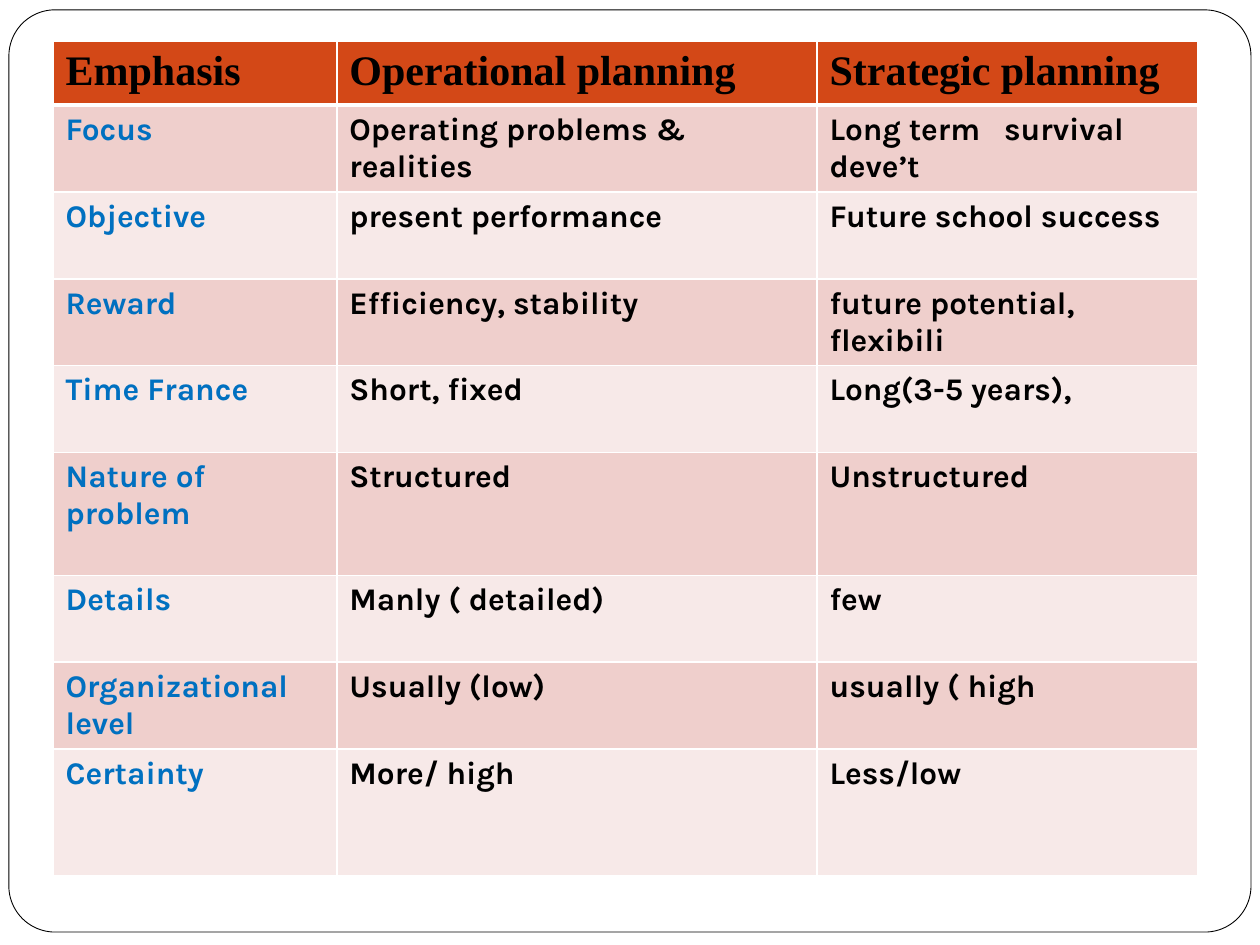
from dataclasses import dataclass

from lxml.etree import SubElement
from pptx import Presentation
from pptx.dml.color import RGBColor
from pptx.enum.shapes import MSO_SHAPE
from pptx.oxml.ns import qn
from pptx.util import Cm, Pt


@dataclass(frozen=True)
class Theme:
    white: str = "FFFFFF"
    ink: str = "000000"
    label: str = "0070C0"
    header: str = "D34817"
    bands: tuple = ("EFCFCC", "F7E9E8")
    head_font: str = "Times New Roman"
    body_font: str = "Karla"
    head_size: int = 24
    body_size: int = 18
    rule: int = 1
    head_rule: int = 3


@dataclass(frozen=True)
class Row:
    emphasis: str
    operational: str
    strategic: str
    height: float = 1.75

    @property
    def texts(self) -> tuple:
        return self.emphasis, self.operational, self.strategic


T = Theme()
COL_WIDTHS = (5.72, 9.68, 7.67)
ROWS = (
    Row("Emphasis", "Operational planning", "Strategic planning", 1.28),
    Row("Focus", "Operating problems & realities", "Long term   survival deve’t"),
    Row("Objective", "present performance", "Future school success"),
    Row("Reward", "Efficiency, stability", "future potential, flexibili"),
    Row("Time France", "Short, fixed", "Long(3-5 years),"),
    Row("Nature of problem", "Structured", "Unstructured", 2.48),
    Row("Details", "Manly ( detailed)", "few"),
    Row("Organizational level", "Usually (low)", "usually ( high"),
    Row("Certainty", "More/ high", "Less/low", 2.55),
)


def rgb(value: str) -> RGBColor:
    return RGBColor.from_string(value)


def write_text(tf, text: str, *, font: str, size: int, color: str, bold: bool = True) -> None:
    r = tf.paragraphs[0].add_run()
    r.text = text
    r.font.name = font
    r.font.size = Pt(size)
    r.font.bold = bold
    r.font.color.rgb = rgb(color)


def set_borders(cell, *, top: int, bottom: int) -> None:
    tc_pr = cell._tc.get_or_add_tcPr()
    widths = {"a:lnL": T.rule, "a:lnR": T.rule, "a:lnT": top, "a:lnB": bottom}
    for tag, width in widths.items():
        ln = SubElement(tc_pr, qn(tag), w=str(Pt(width)))
        fill = SubElement(ln, qn("a:solidFill"))
        SubElement(fill, qn("a:srgbClr"), val=T.white)


def add_frame(s) -> None:
    sp = s.shapes.add_shape(MSO_SHAPE.ROUNDED_RECTANGLE, Cm(0.18), Cm(0.2), Cm(25.04), Cm(18.59))
    sp.adjustments[0] = 0.05
    sp.shadow.inherit = False
    sp.fill.solid()
    sp.fill.fore_color.rgb = rgb(T.white)
    sp.line.color.rgb = rgb(T.ink)
    sp.line.width = Pt(0.5)


def fill_row(table, i: int, row: Row) -> None:
    head = i == 0
    table.rows[i].height = Cm(row.height)
    for j, text in enumerate(row.texts):
        cell = table.cell(i, j)
        set_borders(
            cell,
            top=T.head_rule if i == 1 else T.rule,
            bottom=T.head_rule if head else T.rule,
        )
        cell.fill.solid()
        cell.fill.fore_color.rgb = rgb(T.header if head else T.bands[(i - 1) % 2])
        write_text(
            cell.text_frame,
            text,
            font=T.head_font if head else T.body_font,
            size=T.head_size if head else T.body_size,
            color=T.label if j == 0 and not head else T.ink,
        )


def add_comparison(s, rows: tuple) -> None:
    width = sum(COL_WIDTHS)
    height = sum(row.height for row in rows)
    table = s.shapes.add_table(
        len(rows), len(COL_WIDTHS), Cm(1.07), Cm(0.84), Cm(width), Cm(height)
    ).table
    for col, col_width in zip(table.columns, COL_WIDTHS):
        col.width = Cm(col_width)
    for i, row in enumerate(rows):
        fill_row(table, i, row)


def main() -> None:
    prs = Presentation()
    prs.slide_width, prs.slide_height = Cm(25.4), Cm(19.05)
    s = prs.slides.add_slide(prs.slide_layouts[6])
    add_frame(s)
    add_comparison(s, ROWS)
    prs.save("out.pptx")


if __name__ == "__main__":
    main()
